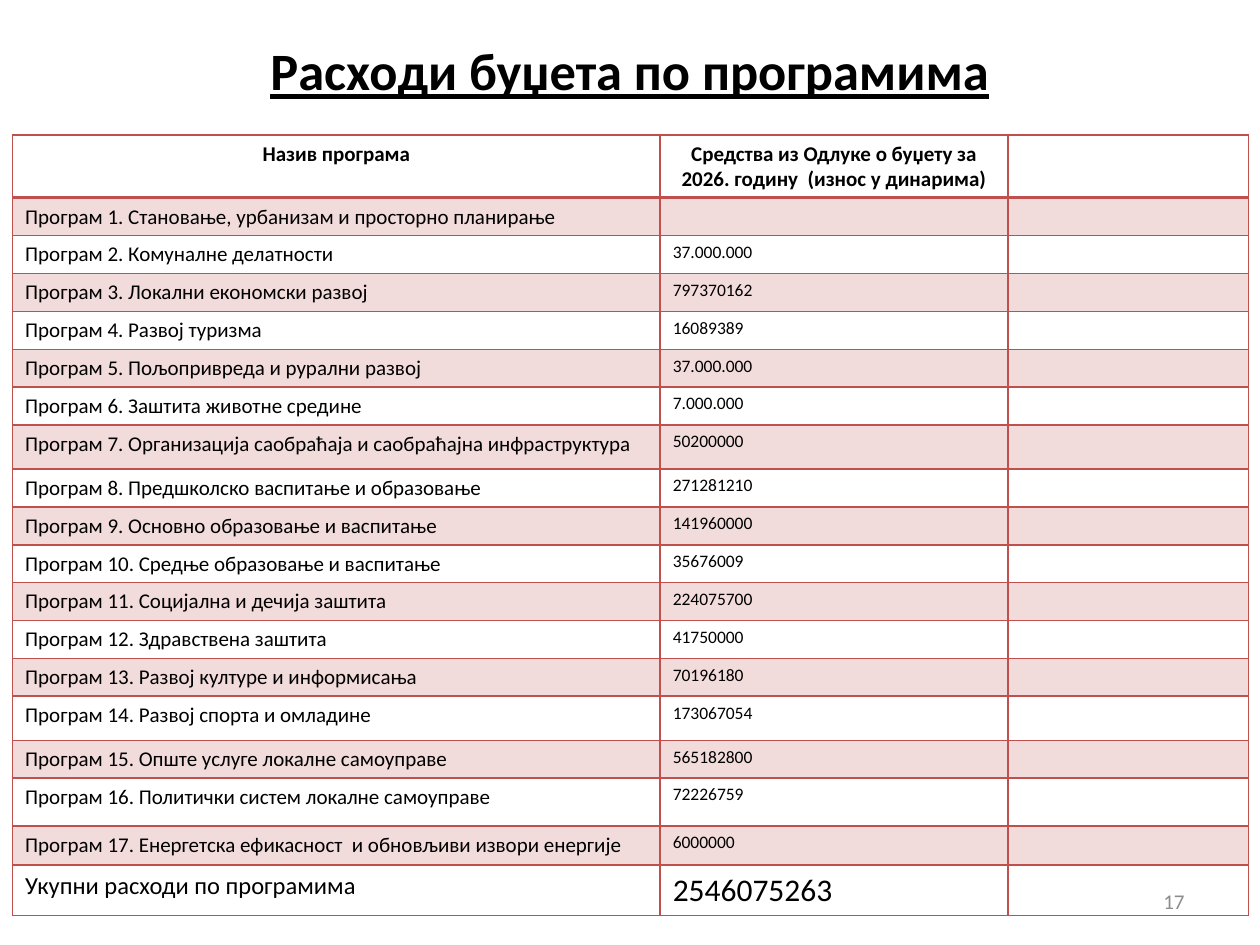
from dataclasses import dataclass

from lxml import etree
from pptx import Presentation
from pptx.dml.color import RGBColor
from pptx.enum.text import MSO_ANCHOR, PP_ALIGN
from pptx.oxml.ns import qn
from pptx.util import Inches, Pt


@dataclass(frozen=True)
class Theme:
    font: str = "Calibri"
    text: str = "000000"
    muted: str = "8C8C8C"
    accent: str = "C0504D"
    band_opacity: int = 20
    title_size: int = 30
    body_size: int = 12
    amount_size: int = 10
    total_label_size: int = 14
    total_amount_size: int = 18


THEME = Theme()

HEADER = (
    "Назив програма",
    "Средства из Одлуке о буџету за 2026. годину  (износ у динарима)",
)
PROGRAMS = [
    ("Становање, урбанизам и просторно планирање", ""),
    ("Комуналне делатности", "37.000.000"),
    ("Локални економски развој", "797370162"),
    ("Развој туризма", "16089389"),
    ("Пољопривреда и рурални развој", "37.000.000"),
    ("Заштита животне средине", "7.000.000"),
    ("Организација саобраћаја и саобраћајна инфраструктура", "50200000"),
    ("Предшколско васпитање и образовање", "271281210"),
    ("Основно образовање и васпитање", "141960000"),
    ("Средње образовање и васпитање", "35676009"),
    ("Социјална и дечија заштита", "224075700"),
    ("Здравствена заштита", "41750000"),
    ("Развој културе и информисања", "70196180"),
    ("Развој спорта и омладине", "173067054"),
    ("Опште услуге локалне самоуправе", "565182800"),
    ("Политички систем локалне самоуправе", "72226759"),
    ("Енергетска ефикасност  и обновљиви извори енергије", "6000000"),
]
TOTAL = ("Укупни расходи по програмима", "2546075263")

COLUMN_WIDTHS = (5.14, 2.76, 1.91)
HEADER_HEIGHT, PROGRAM_HEIGHT, TOTAL_HEIGHT = 0.49, 0.29, 0.39
TALL_PROGRAMS = {7: 0.35, 14: 0.35, 16: 0.38, 17: 0.31}


def style_paragraph(paragraph, size, color=THEME.text, bold=False,
                    underline=False, align=PP_ALIGN.LEFT):
    paragraph.alignment = align
    for run in paragraph.runs:
        font = run.font
        font.name, font.size = THEME.font, Pt(size)
        font.bold, font.underline = bold, underline
        font.color.rgb = RGBColor.from_string(color)


def add_text(slide, box, text, size, **style):
    text_frame = slide.shapes.add_textbox(*map(Inches, box)).text_frame
    text_frame.word_wrap = True
    text_frame.vertical_anchor = MSO_ANCHOR.MIDDLE
    text_frame.text = text
    style_paragraph(text_frame.paragraphs[0], size, **style)


def set_borders(cell, bottom_width):
    properties = cell._tc.get_or_add_tcPr()
    for side, width in (("L", 1), ("R", 1), ("T", 1), ("B", bottom_width)):
        line = etree.SubElement(properties, qn(f"a:ln{side}"), w=str(Pt(width)))
        fill = etree.SubElement(line, qn("a:solidFill"))
        etree.SubElement(fill, qn("a:srgbClr"), val=THEME.accent)


def set_fill(cell, banded):
    if not banded:
        cell.fill.background()
        return
    cell.fill.solid()
    cell.fill.fore_color.rgb = RGBColor.from_string(THEME.accent)
    color = cell._tc.tcPr.find(qn("a:solidFill")).find(qn("a:srgbClr"))
    etree.SubElement(color, qn("a:alpha"), val=str(THEME.band_opacity * 1000))


def fill_cell(cell, text, size, header, banded):
    set_borders(cell, 2 if header else 1)
    set_fill(cell, banded)
    paragraph = cell.text_frame.paragraphs[0]
    if text:
        paragraph.text = text
        style_paragraph(paragraph, size, bold=header,
                        align=PP_ALIGN.CENTER if header else PP_ALIGN.LEFT)
    else:
        # An empty cell takes its line height from the end-of-paragraph size.
        etree.SubElement(paragraph._p, qn("a:endParaRPr"), sz=str(size * 100))


def add_budget_table(slide, box):
    programs = [(f"Програм {number}. {name}", amount)
                for number, (name, amount) in enumerate(PROGRAMS, 1)]
    rows = [HEADER, *programs, TOTAL]
    last = len(rows) - 1
    table = slide.shapes.add_table(
        len(rows), len(COLUMN_WIDTHS), *map(Inches, box)).table
    table.first_row = table.horz_banding = False
    for column, width in zip(table.columns, COLUMN_WIDTHS):
        column.width = Inches(width)

    for index, (label, amount) in enumerate(rows):
        header = index == 0
        sizes = (THEME.body_size, THEME.amount_size)
        height = TALL_PROGRAMS.get(index, PROGRAM_HEIGHT)
        if header:
            sizes = (THEME.body_size, THEME.body_size)
            height = HEADER_HEIGHT
        elif index == last:
            sizes = (THEME.total_label_size, THEME.total_amount_size)
            height = TOTAL_HEIGHT
        table.rows[index].height = Inches(height)
        texts = (label, amount, "")
        for column, (text, size) in enumerate(
                zip(texts, (*sizes, THEME.amount_size))):
            fill_cell(table.cell(index, column), text, size, header,
                      banded=index % 2 == 1)


def main():
    presentation = Presentation()
    presentation.slide_width, presentation.slide_height = Inches(10), Inches(7.5)
    slide = presentation.slides.add_slide(presentation.slide_layouts[6])
    add_text(slide, (0.74, 0.13, 8.52, 0.85), "Расходи буџета по програмима",
             THEME.title_size, bold=True, underline=True, align=PP_ALIGN.CENTER)
    add_text(slide, (7.17, 6.95, 2.33, 0.4), "17", THEME.body_size,
             color=THEME.muted, align=PP_ALIGN.RIGHT)
    add_budget_table(slide, (0.1, 1.07, 9.8, 6.2))
    presentation.save("out.pptx")


if __name__ == "__main__":
    main()
